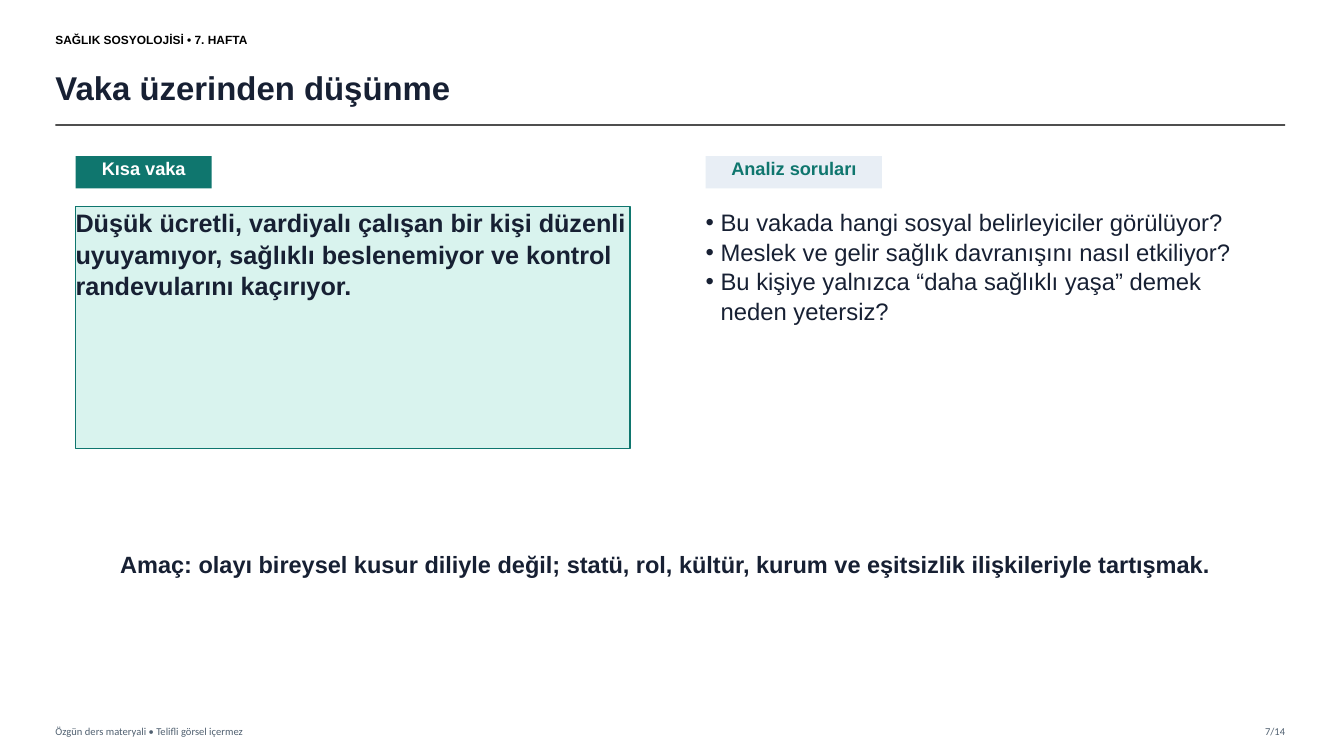
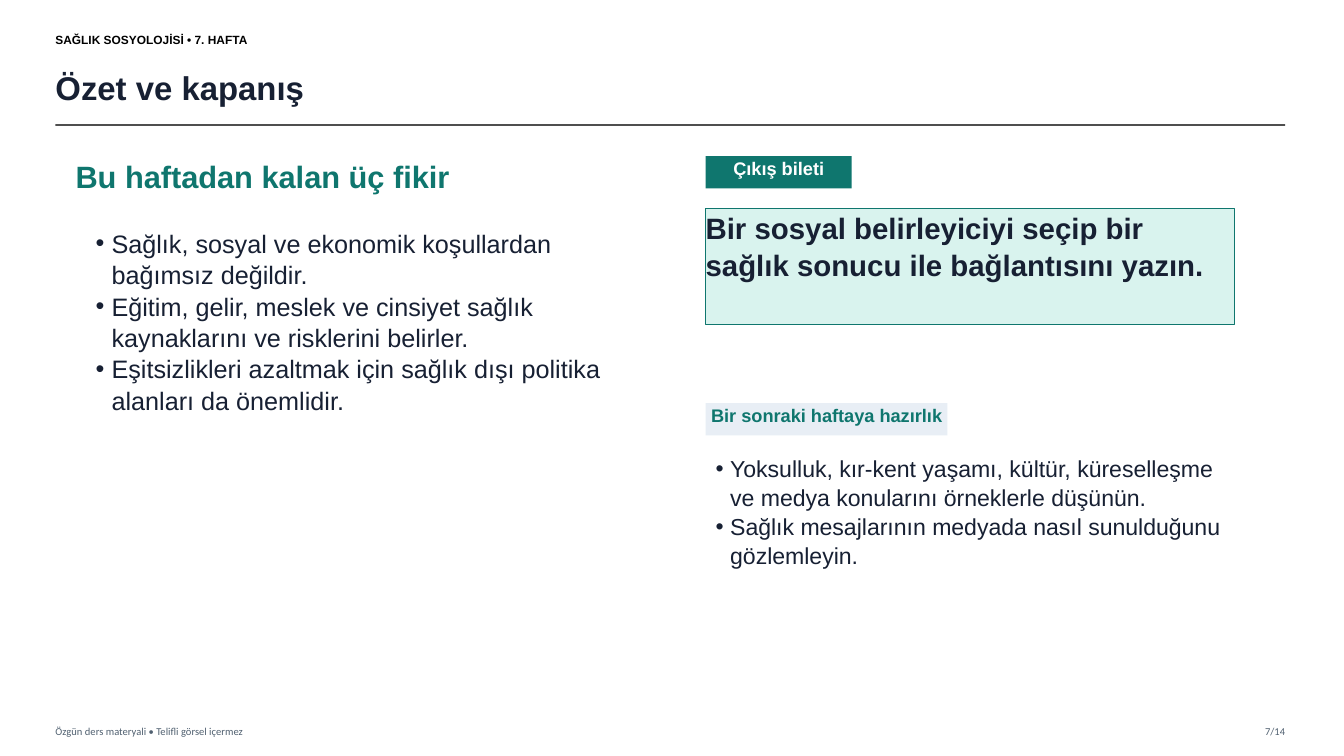
from lxml import etree
from pptx import Presentation
from pptx.dml.color import RGBColor
from pptx.enum.shapes import MSO_CONNECTOR, MSO_SHAPE
from pptx.enum.text import MSO_ANCHOR, PP_ALIGN
from pptx.oxml.ns import qn
from pptx.util import Pt

LEFT, CENTER, RIGHT = PP_ALIGN.LEFT, PP_ALIGN.CENTER, PP_ALIGN.RIGHT
TOP, MIDDLE = MSO_ANCHOR.TOP, MSO_ANCHOR.MIDDLE
RECTANGLE, STRAIGHT = MSO_SHAPE.RECTANGLE, MSO_CONNECTOR.STRAIGHT

INK, TEAL, MINT, MIST = "172033", "0F766E", "D9F3EE", "E8EEF5"
WHITE, BLACK, RULE, SLATE = "FFFFFF", "000000", "333333", "506070"

SLIDE_W, SLIDE_H = 960, 540
MARGIN = 39.6
RIGHT_EDGE = 918
LEFT_COL, RIGHT_COL = 54, 504
BODY_TOP = 111.6
LABEL_H = 23.04
FOOTER_TOP, FOOTER_H = 514.08, 15.84
PAGE_W = 46.8
LINE_SPACING = 1.04
BULLET_INDENT = 0.63  # share of the text size

COURSE = "SAĞLIK SOSYOLOJİSİ • 7. HAFTA"
FOOTER = "Özgün ders materyali • Telifli görsel içermez"
PAGE = "7/14"


def color(hex_value):
    return RGBColor.from_string(hex_value)


def add_bullet(paragraph, size):
    props = paragraph._p.get_or_add_pPr()
    indent = Pt(size * BULLET_INDENT)
    props.set("marL", str(indent))
    props.set("indent", str(-indent))
    etree.SubElement(props, qn("a:buFont")).set("typeface", "Arial")
    etree.SubElement(props, qn("a:buChar")).set("char", "•")


def write(frame, text, size=18, ink=INK, bold=False, font="Arial",
          align=LEFT, anchor=TOP, bullets=False):
    """Fill a text frame, one paragraph for each line of text."""
    frame.word_wrap = True
    frame.vertical_anchor = anchor
    frame.margin_left = frame.margin_right = 0
    frame.margin_top = frame.margin_bottom = 0
    frame.text = text
    for paragraph in frame.paragraphs:
        paragraph.alignment = align
        paragraph.line_spacing = LINE_SPACING
        if bullets:
            add_bullet(paragraph, size)
        paragraph.font.name = font
        paragraph.font.size = Pt(size)
        paragraph.font.bold = bold
        paragraph.font.color.rgb = color(ink)


def add_text(slide, x, y, w, h, text, **text_format):
    box = slide.shapes.add_textbox(Pt(x), Pt(y), Pt(w), Pt(h))
    write(box.text_frame, text, **text_format)


def add_bullets(slide, x, y, w, h, items, size):
    add_text(slide, x, y, w, h, "\n".join(items), size=size, bullets=True)


def add_panel(slide, x, y, w, h, text, fill, border=None, **text_format):
    panel = slide.shapes.add_shape(RECTANGLE, Pt(x), Pt(y), Pt(w), Pt(h))
    panel.shadow.inherit = False
    panel.fill.solid()
    panel.fill.fore_color.rgb = color(fill)
    if border:
        panel.line.color.rgb = color(border)
        panel.line.width = Pt(1)
    else:
        panel.line.fill.background()
    write(panel.text_frame, text, bold=True, **text_format)


def add_label(slide, x, y, w, text, fill=TEAL, ink=WHITE):
    add_panel(slide, x, y, w, LABEL_H, text, fill,
              size=13, ink=ink, align=CENTER)


def add_card(slide, x, y, w, h, text, size):
    add_panel(slide, x, y, w, h, text, MINT, border=TEAL, size=size)


def add_title_rule(slide):
    y = Pt(89.28)
    rule = slide.shapes.add_connector(STRAIGHT, Pt(MARGIN), y,
                                      Pt(RIGHT_EDGE), y)
    rule.line.color.rgb = color(RULE)
    rule.line.width = Pt(1.2)
    props = rule._element.spPr
    rgb = props.find(".//" + qn("a:srgbClr"))
    etree.SubElement(rgb, qn("a:alpha")).set("val", "85000")
    etree.SubElement(props, qn("a:effectLst"))


def new_slide(deck, title):
    """Add a slide with the shared header, title, rule and footer."""
    slide = deck.slides.add_slide(deck.slide_layouts[6])
    add_text(slide, MARGIN, 18, 259.2, 20.16, COURSE,
             size=8.5, ink=BLACK, bold=True, anchor=MIDDLE)
    add_text(slide, MARGIN, 41.76, 860.4, MARGIN, title,
             size=23.5, bold=True, anchor=MIDDLE)
    add_title_rule(slide)
    footer_format = dict(size=7.5, ink=SLATE, font="Calibri", anchor=MIDDLE)
    add_text(slide, MARGIN, FOOTER_TOP, 432, FOOTER_H, FOOTER,
             **footer_format)
    add_text(slide, RIGHT_EDGE - PAGE_W, FOOTER_TOP, PAGE_W, FOOTER_H, PAGE,
             align=RIGHT, **footer_format)
    return slide


def add_case_slide(deck):
    slide = new_slide(deck, "Vaka üzerinden düşünme")
    add_label(slide, LEFT_COL, BODY_TOP, 97.2, "Kısa vaka")
    add_card(slide, LEFT_COL, 147.6, 396, 172.8,
             "Düşük ücretli, vardiyalı çalışan bir kişi düzenli uyuyamıyor, "
             "sağlıklı beslenemiyor ve kontrol randevularını kaçırıyor.", 18)
    add_label(slide, RIGHT_COL, BODY_TOP, 126, "Analiz soruları", MIST, TEAL)
    add_bullets(slide, RIGHT_COL, 147.6, 388.8, 190.8, [
        "Bu vakada hangi sosyal belirleyiciler görülüyor?",
        "Meslek ve gelir sağlık davranışını nasıl etkiliyor?",
        "Bu kişiye yalnızca “daha sağlıklı yaşa” demek neden yetersiz?",
    ], 17)
    add_text(slide, 75.6, 392.4, 799.2, 43.2,
             "Amaç: olayı bireysel kusur diliyle değil; statü, rol, kültür, "
             "kurum ve eşitsizlik ilişkileriyle tartışmak.",
             size=16.8, bold=True, align=CENTER)


def add_summary_slide(deck):
    slide = new_slide(deck, "Özet ve kapanış")
    add_text(slide, LEFT_COL, BODY_TOP, 388.8, 32.4,
             "Bu haftadan kalan üç fikir", size=22, ink=TEAL, bold=True)
    add_bullets(slide, 68.4, 162, 396, 172.8, [
        "Sağlık, sosyal ve ekonomik koşullardan bağımsız değildir.",
        "Eğitim, gelir, meslek ve cinsiyet sağlık kaynaklarını ve "
        "risklerini belirler.",
        "Eşitsizlikleri azaltmak için sağlık dışı politika alanları da "
        "önemlidir.",
    ], 18)
    add_label(slide, RIGHT_COL, BODY_TOP, 104.4, "Çıkış bileti")
    add_card(slide, RIGHT_COL, 149.04, 378, 82.8,
             "Bir sosyal belirleyiciyi seçip bir sağlık sonucu ile "
             "bağlantısını yazın.", 21)
    add_label(slide, RIGHT_COL, 288, 172.8, "Bir sonraki haftaya hazırlık",
              MIST, TEAL)
    add_bullets(slide, 511.2, 324, 374.4, 97.2, [
        "Yoksulluk, kır-kent yaşamı, kültür, küreselleşme ve medya "
        "konularını örneklerle düşünün.",
        "Sağlık mesajlarının medyada nasıl sunulduğunu gözlemleyin.",
    ], 16.5)


def main():
    deck = Presentation()
    deck.slide_width, deck.slide_height = Pt(SLIDE_W), Pt(SLIDE_H)
    add_case_slide(deck)
    add_summary_slide(deck)
    deck.save("out.pptx")


if __name__ == "__main__":
    main()
